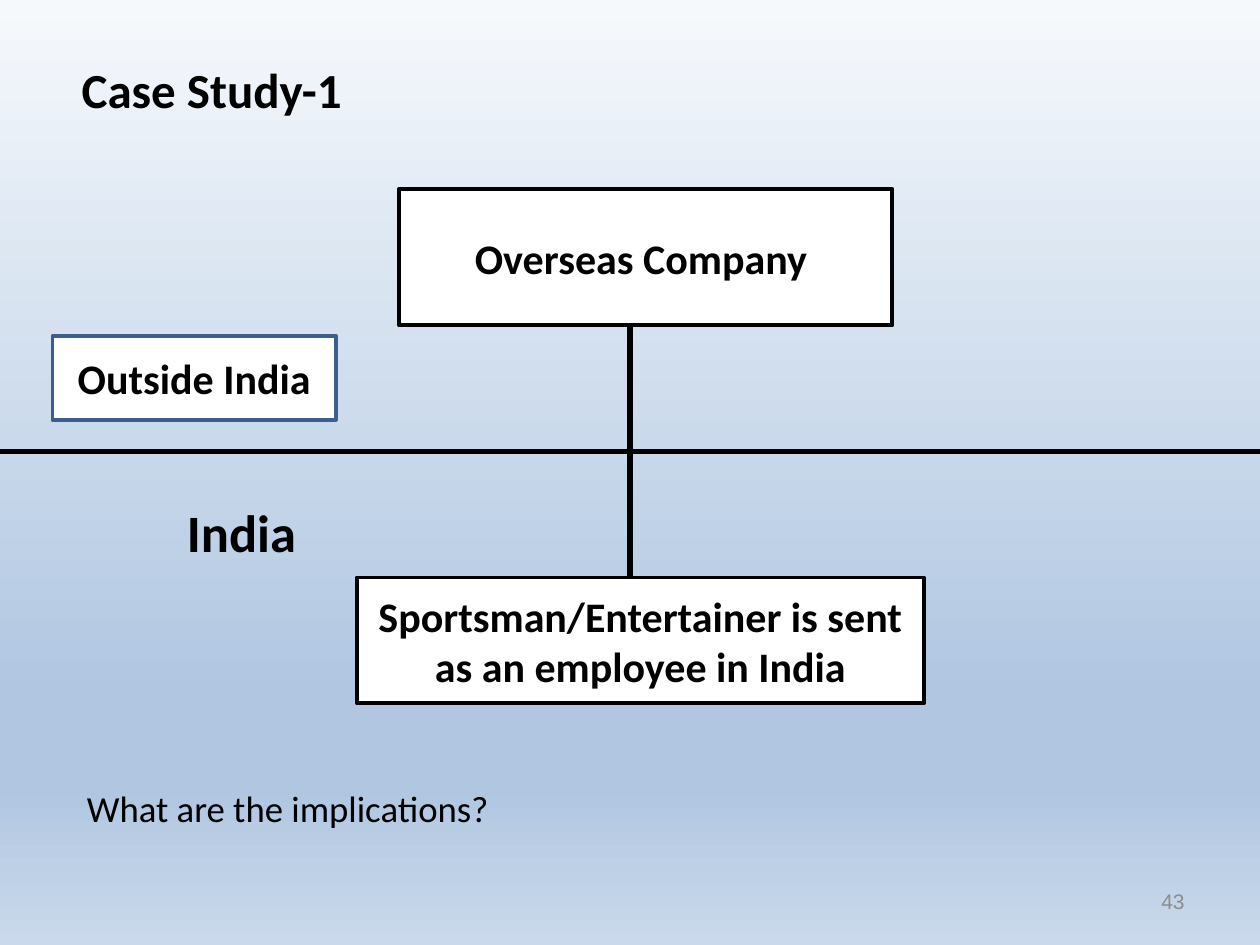
from dataclasses import dataclass

from lxml.etree import SubElement
from pptx import Presentation
from pptx.dml.color import RGBColor
from pptx.enum.shapes import MSO_CONNECTOR, MSO_SHAPE
from pptx.enum.text import MSO_ANCHOR, PP_ALIGN
from pptx.oxml.ns import qn
from pptx.util import Inches, Pt


@dataclass(frozen=True)
class Theme:
    font: str = "Calibri"
    number_font: str = "Arial"
    ink: str = "000000"
    paper: str = "FFFFFF"
    accent: str = "3A5F8C"
    muted: str = "8C8C8C"
    sky: tuple = ((0, "F6F9FC"), (74, "B0C6E1"), (83, "B0C6E1"), (100, "CAD9EB"))
    title: int = 28
    region: int = 30
    label: int = 24
    question: int = 21
    number: int = 12
    rule: float = 3
    border: float = 2.25
    thin_border: float = 2


THEME = Theme()
COLUMNS, ROWS = 120, 90
CELL = Inches(10) / COLUMNS


def grid(*cells):
    return [round(cell * CELL) for cell in cells]


def color(code):
    return RGBColor.from_string(code)


def paint_background(page):
    fill = page.background.fill
    fill.gradient()
    fill.gradient_angle = 270
    stops = page.element.find(".//" + qn("a:gsLst"))
    for stop in list(stops):
        stops.remove(stop)
    for share, code in THEME.sky:
        stop = SubElement(stops, qn("a:gs"), pos=str(share * 1000))
        SubElement(stop, qn("a:srgbClr"), val=code)


def write(box, lines, size, bold=True, align=PP_ALIGN.CENTER,
          anchor=MSO_ANCHOR.MIDDLE, wrap=True, font=THEME.font, ink=THEME.ink):
    frame = box.text_frame
    frame.word_wrap = wrap
    frame.vertical_anchor = anchor
    for index, line in enumerate(lines):
        para = frame.add_paragraph() if index else frame.paragraphs[0]
        para.alignment = align
        span = para.add_run()
        span.text = line
        span.font.name = font
        span.font.size = Pt(size)
        span.font.bold = bold
        span.font.color.rgb = color(ink)


def add_text(page, place, line, size, **style):
    box = page.shapes.add_textbox(*grid(*place))
    write(box, [line], size, **style)


def add_panel(page, place, lines, border=THEME.ink, width=THEME.border, wrap=False):
    panel = page.shapes.add_shape(MSO_SHAPE.RECTANGLE, *grid(*place))
    panel.shadow.inherit = False
    panel.fill.solid()
    panel.fill.fore_color.rgb = color(THEME.paper)
    panel.line.color.rgb = color(border)
    panel.line.width = Pt(width)
    write(panel, lines, THEME.label, wrap=wrap)


def add_rule(page, ends, arrow=False):
    rule = page.shapes.add_connector(MSO_CONNECTOR.STRAIGHT, *grid(*ends))
    rule.line.color.rgb = color(THEME.ink)
    rule.line.width = Pt(THEME.rule)
    if arrow:
        SubElement(rule.line._get_or_add_ln(), qn("a:tailEnd"), type="triangle")
    SubElement(rule._element.spPr, qn("a:effectLst"))


def main():
    deck = Presentation()
    deck.slide_width, deck.slide_height = grid(COLUMNS, ROWS)
    page = deck.slides.add_slide(deck.slide_layouts[6])
    paint_background(page)

    add_text(page, (6.6, 6, 98.6, 4.9), "Case Study-1", THEME.title,
             align=PP_ALIGN.LEFT)
    add_rule(page, (0, 43, COLUMNS, 43))
    add_rule(page, (COLUMNS / 2, 58, COLUMNS / 2, 29), arrow=True)
    add_text(page, (10, 47, 26, 7.2), "India", THEME.region, anchor=MSO_ANCHOR.TOP)
    add_panel(page, (34, 55, 54, 12),
              [" Sportsman/Entertainer is sent ", "as an employee in India"])
    add_panel(page, (38, 18, 47, 13), ["Overseas Company "])
    add_text(page, (7.1, 74.2, 109, 5.4), "What are the implications?",
             THEME.question, bold=False, align=PP_ALIGN.LEFT, anchor=MSO_ANCHOR.TOP)
    add_panel(page, (5, 32, 27, 8), ["Outside India"],
              border=THEME.accent, width=THEME.thin_border, wrap=True)
    add_text(page, (86, 83.4, 28, 4.8), "43", THEME.number, bold=False,
             align=PP_ALIGN.RIGHT, font=THEME.number_font, ink=THEME.muted)
    deck.save("out.pptx")


if __name__ == "__main__":
    main()
